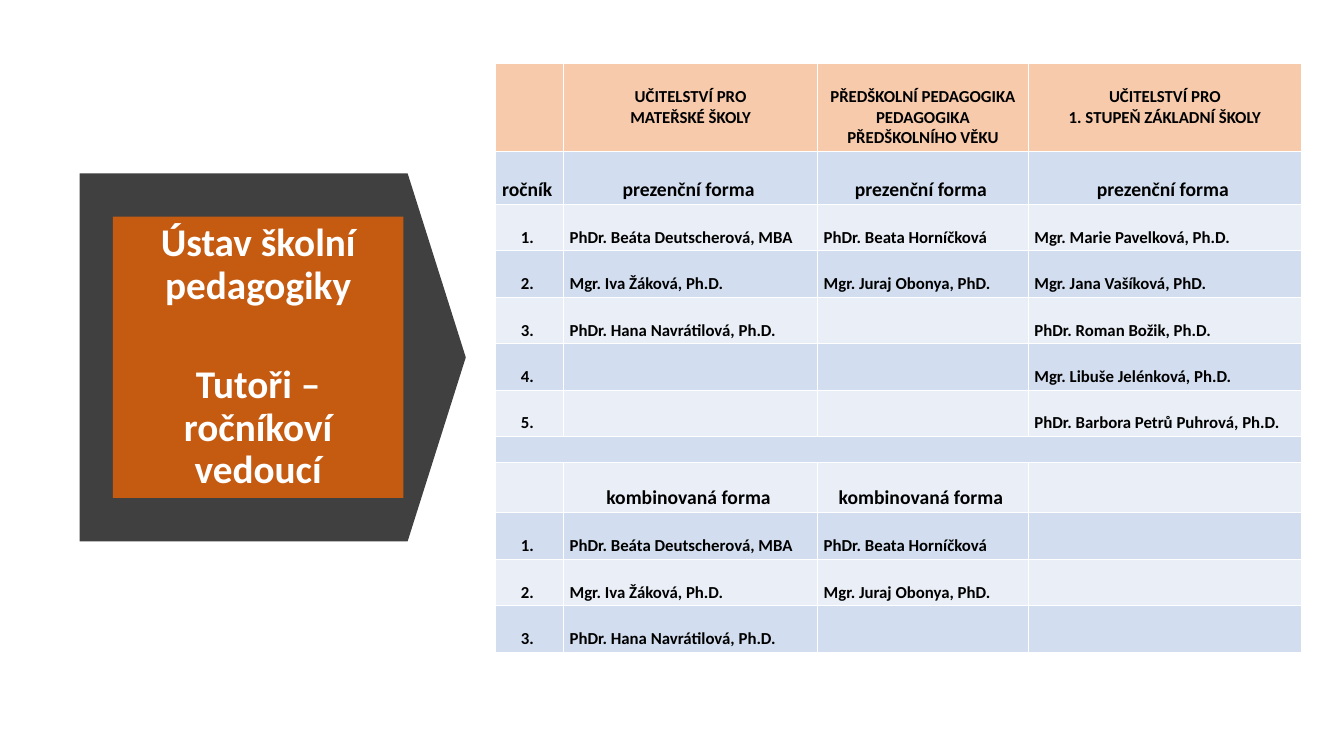
from lxml import etree
from pptx import Presentation
from pptx.dml.color import RGBColor
from pptx.enum.shapes import MSO_SHAPE as SHAPE
from pptx.enum.text import MSO_ANCHOR as ANCHOR, PP_ALIGN as ALIGN
from pptx.oxml.ns import qn
from pptx.util import Inches, Pt

COLORS = {"arrow": "404040", "title": "C55A11", "header": "F7CAAC",
          "dark_band": "D2DEEF", "light_band": "EAEFF7",
          "white": "FFFFFF", "black": "000000"}
COL_WIDTHS = [0.68, 2.52, 2.09, 2.71]
ROW_HEIGHTS = [0.87, 0.53] + [0.46] * 5 + [0.26, 0.5] + [0.46] * 3
HEADER_ROW, GAP_ROW, FORM_ROWS = 0, 7, (1, 8)
FULL_TIME, COMBINED = "prezenční forma", "kombinovaná forma"
TUTORS = [
    ["", "UČITELSTVÍ PRO\nMATEŘSKÉ ŠKOLY",
     "PŘEDŠKOLNÍ PEDAGOGIKA\nPEDAGOGIKA PŘEDŠKOLNÍHO VĚKU",
     "UČITELSTVÍ PRO\n1. STUPEŇ ZÁKLADNÍ ŠKOLY"],
    ["ročník", FULL_TIME, FULL_TIME, FULL_TIME],
    ["1.", "PhDr. Beáta Deutscherová, MBA", "PhDr. Beata Horníčková", "Mgr. Marie Pavelková, Ph.D."],
    ["2.", "Mgr. Iva Žáková, Ph.D.", "Mgr. Juraj Obonya, PhD.", "Mgr. Jana Vašíková, PhD."],
    ["3.", "PhDr. Hana Navrátilová, Ph.D.", "", "PhDr. Roman Božik, Ph.D."],
    ["4.", "", "", "Mgr. Libuše Jelénková, Ph.D."],
    ["5.", "", "", "PhDr. Barbora Petrů Puhrová, Ph.D."],
    ["", "", "", ""],
    ["", COMBINED, COMBINED, ""],
    ["1.", "PhDr. Beáta Deutscherová, MBA", "PhDr. Beata Horníčková", ""],
    ["2.", "Mgr. Iva Žáková, Ph.D.", "Mgr. Juraj Obonya, PhD.", ""],
    ["3.", "PhDr. Hana Navrátilová, Ph.D.", "", ""],
]


def rgb(name):
    return RGBColor.from_string(COLORS[name])


def write(tf, text, size=12, color="black", align=ALIGN.LEFT, spacing=1.0, gap=0):
    for i, line in enumerate(text.split("\n")):
        p = tf.paragraphs[0] if i == 0 else tf.add_paragraph()
        p.alignment, p.line_spacing = align, spacing
        p.space_before, p.space_after = Pt(gap if i else 0), Pt(0)
        if not line:
            etree.SubElement(p._p, qn("a:endParaRPr"), sz=str(size * 100))
            continue
        r = p.add_run()
        r.text = line
        r.font.name, r.font.size, r.font.bold = "Calibri", Pt(size), True
        r.font.color.rgb = rgb(color)


def add_borders(cell, color="white", width=0.75):
    tc_pr = cell._tc.get_or_add_tcPr()
    for side in ("lnL", "lnR", "lnT", "lnB"):
        ln = etree.SubElement(tc_pr, qn(f"a:{side}"), w=str(Pt(width)))
        fill = etree.SubElement(ln, qn("a:solidFill"))
        etree.SubElement(fill, qn("a:srgbClr"), val=COLORS[color])


def add_title_arrow(s, x, y, w, h):
    arrow = s.shapes.add_shape(SHAPE.DOWN_ARROW, Inches(x + (w - h) / 2),
                               Inches(y + (h - w) / 2), Inches(h), Inches(w))
    arrow.rotation = 270
    arrow.adjustments[0], arrow.adjustments[1] = 1, 0.158
    arrow.shadow.inherit = False
    arrow.fill.solid()
    arrow.fill.fore_color.rgb = rgb("arrow")
    arrow.line.fill.background()

    title = s.shapes.title
    title.left, title.top = Inches(x + 0.33), Inches(y + 0.43)
    title.width, title.height = Inches(2.88), Inches(2.79)
    title.fill.solid()
    title.fill.fore_color.rgb = rgb("title")
    tf = title.text_frame
    tf.word_wrap, tf.vertical_anchor = True, ANCHOR.MIDDLE
    write(tf, "Ústav školní pedagogiky\nTutoři – ročníkoví vedoucí", size=28,
          color="white", align=ALIGN.CENTER, spacing=0.9, gap=41)
    s.shapes._spTree.append(title._element)


def add_tutor_table(s, x, y, w, h):
    table = s.shapes.add_table(len(ROW_HEIGHTS), len(COL_WIDTHS), Inches(x),
                               Inches(y), Inches(w), Inches(h)).table
    for col, width in zip(table.columns, COL_WIDTHS):
        col.width = Inches(width)
    for row, height in zip(table.rows, ROW_HEIGHTS):
        row.height = Inches(height)
    for i, texts in enumerate(TUTORS):
        band = "header" if i == HEADER_ROW else "dark_band" if i % 2 else "light_band"
        for j, text in enumerate(texts):
            cell = table.cell(i, j)
            centered = i == HEADER_ROW or i in FORM_ROWS or j == 0
            cell.margin_left = Inches(0.06)
            cell.margin_right = Inches(0.1 if centered and i != HEADER_ROW else 0.06)
            cell.margin_top = cell.margin_bottom = Inches(0.03)
            cell.vertical_anchor = ANCHOR.MIDDLE if i == HEADER_ROW and j != 2 else ANCHOR.BOTTOM
            add_borders(cell)
            cell.fill.solid()
            cell.fill.fore_color.rgb = rgb(band)
            write(cell.text_frame, text, size=14 if i in FORM_ROWS else 10 if i == GAP_ROW else 12,
                  align=ALIGN.CENTER if centered else ALIGN.LEFT)
    table.cell(GAP_ROW, 0).merge(table.cell(GAP_ROW, len(COL_WIDTHS) - 1))


def main():
    prs = Presentation()
    prs.slide_width, prs.slide_height = Inches(13.33), Inches(7.5)
    s = prs.slides.add_slide(prs.slide_layouts[5])
    add_title_arrow(s, 0.79, 1.72, 3.83, 3.65)
    add_tutor_table(s, 4.91, 0.63, sum(COL_WIDTHS), sum(ROW_HEIGHTS))
    prs.save("out.pptx")


if __name__ == "__main__":
    main()
